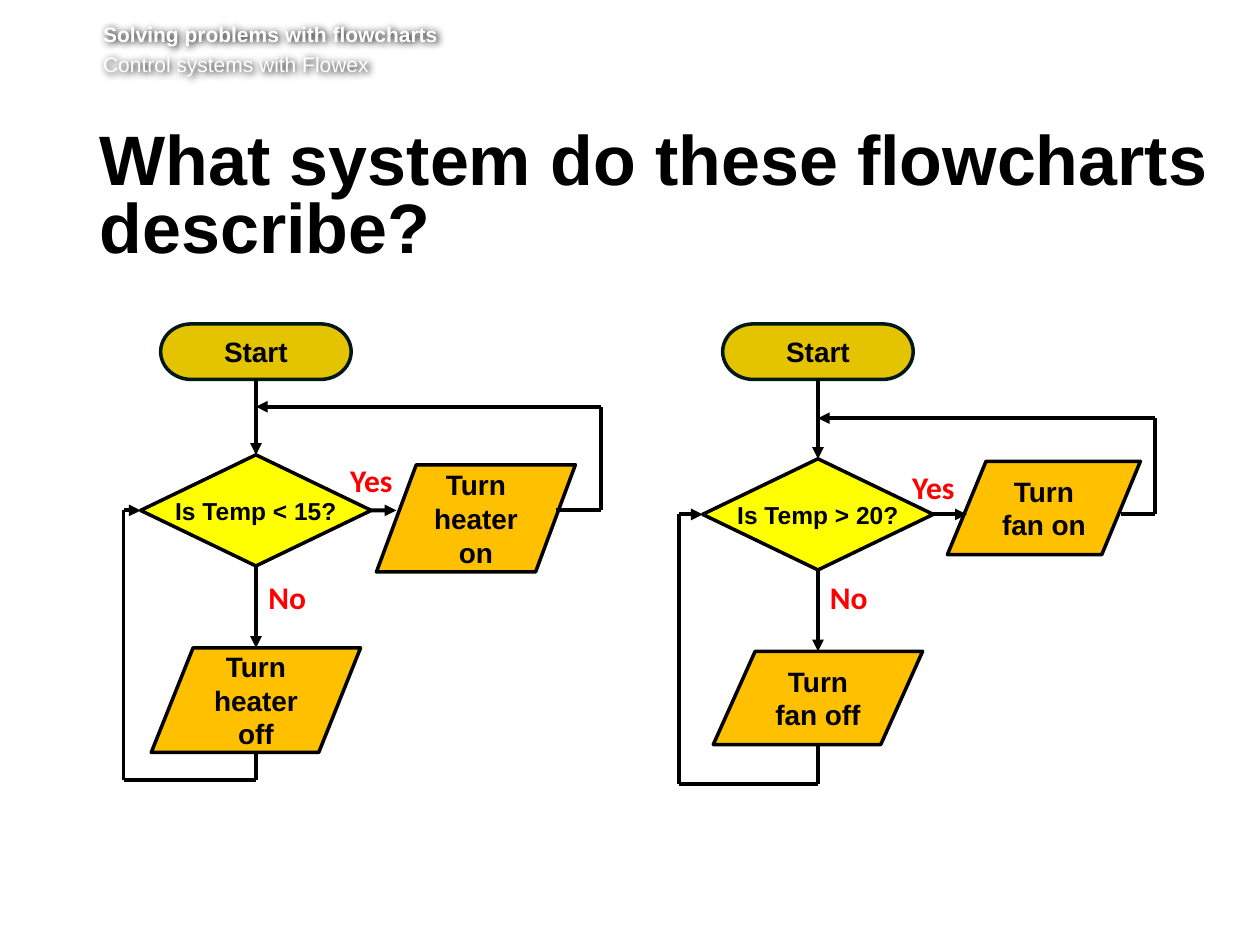
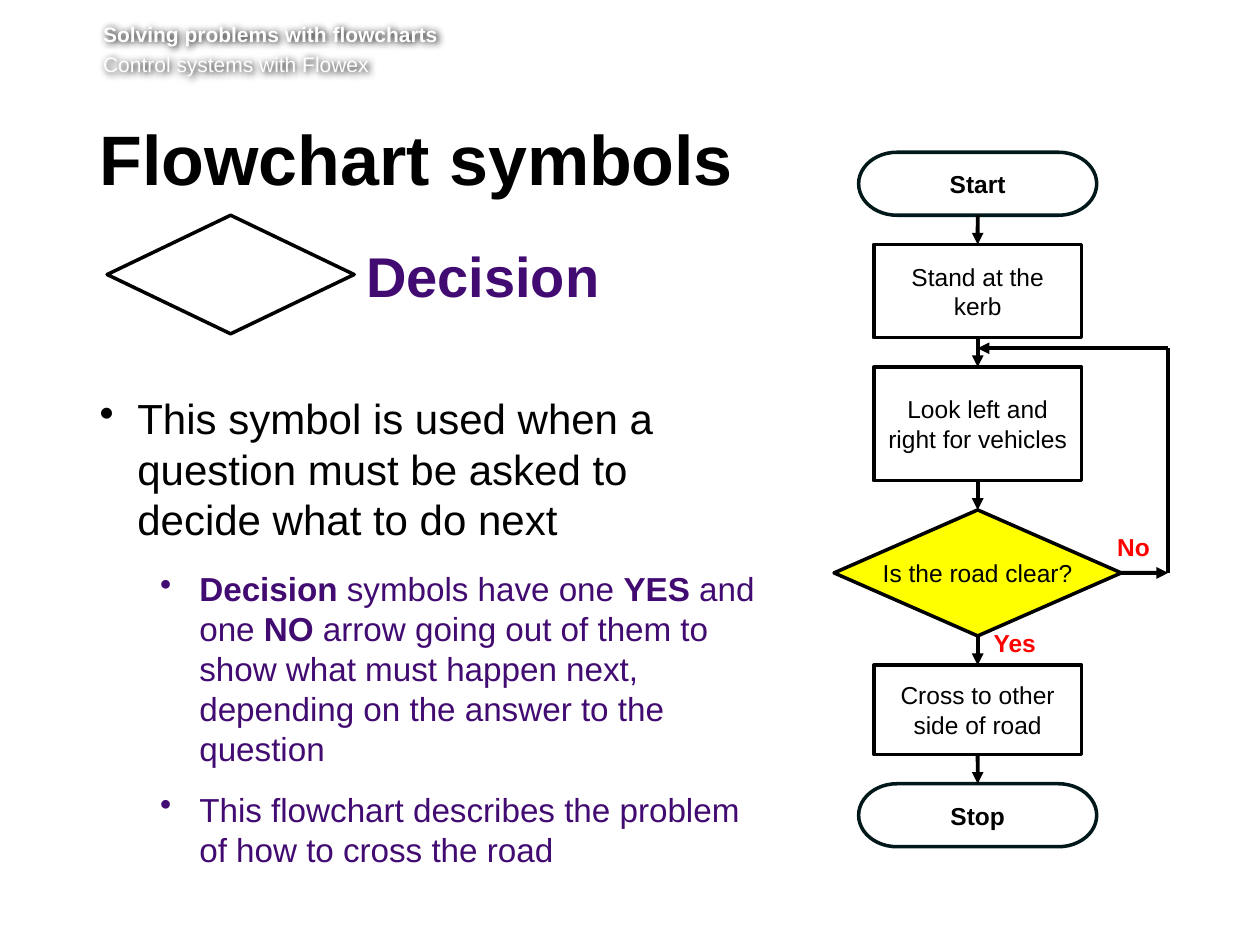
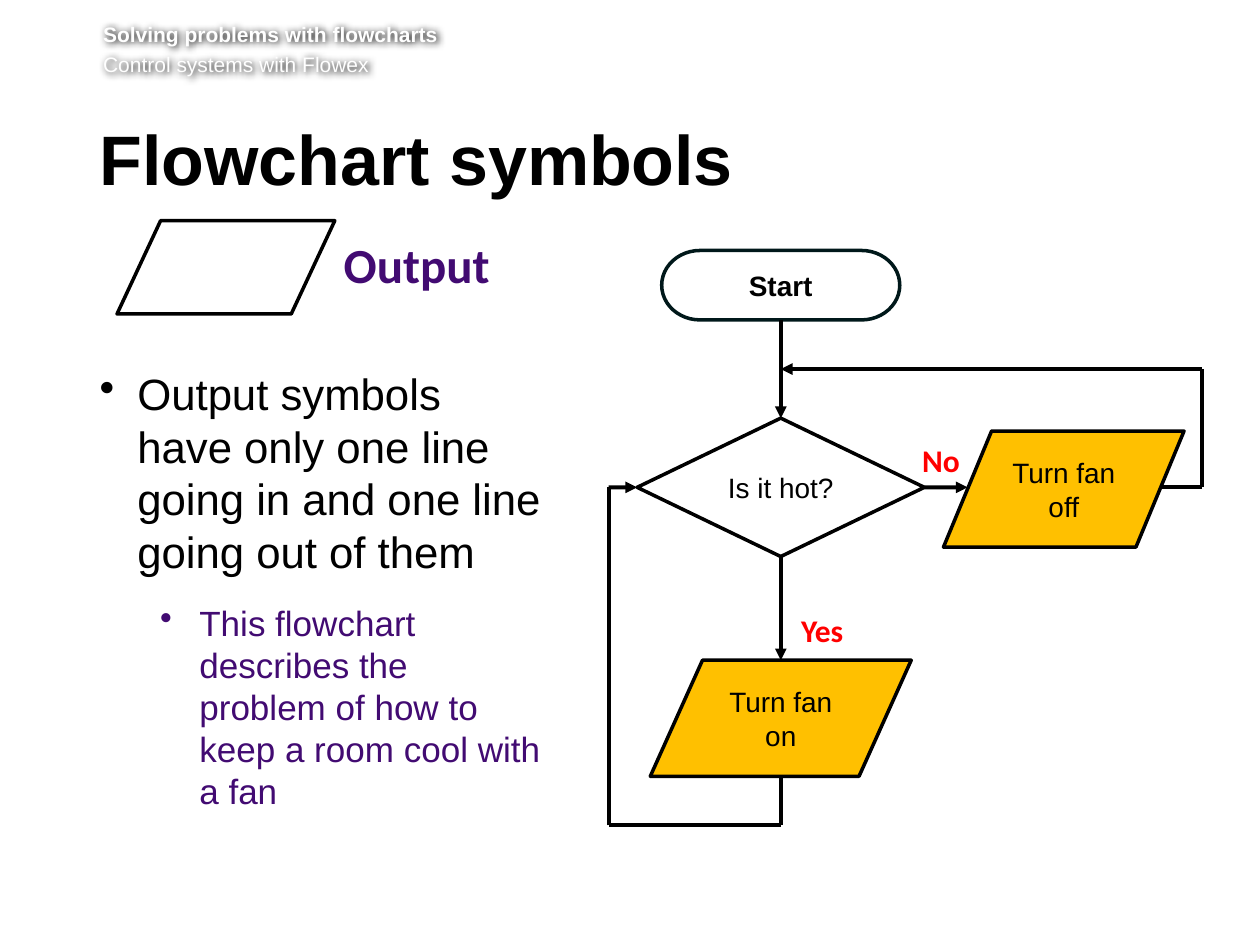
from dataclasses import dataclass

from lxml import etree
from pptx import Presentation
from pptx.dml.color import RGBColor
from pptx.enum.shapes import MSO_CONNECTOR, MSO_SHAPE
from pptx.enum.text import MSO_ANCHOR, PP_ALIGN
from pptx.oxml.ns import qn
from pptx.util import Cm, Pt

STRAIGHT = MSO_CONNECTOR.STRAIGHT
TERMINATOR = MSO_SHAPE.FLOWCHART_TERMINATOR
DECISION = MSO_SHAPE.FLOWCHART_DECISION
OUTPUT = MSO_SHAPE.FLOWCHART_DATA
PROCESS = MSO_SHAPE.RECTANGLE
MIDDLE = MSO_ANCHOR.MIDDLE
CENTER = PP_ALIGN.CENTER
TOP, LEFT, BOTTOM, RIGHT = range(4)


@dataclass(frozen=True)
class Theme:
    font: str = "Arial"
    label_font: str = "Calibri"
    black: str = "000000"
    white: str = "FFFFFF"
    purple: str = "420B72"
    red: str = "FF0000"
    yellow: str = "FFFF00"
    gold: str = "E4C400"
    orange: str = "FFC000"
    terminator_line: str = "00181A"
    title: int = 40
    title_leading: int = 39
    symbol: int = 32
    symbol_small: int = 28
    decision_body: tuple = (24, 19)
    output_body: tuple = (25, 20)
    header: int = 12
    label: int = 18
    node: int = 16
    node_small: int = 14
    outline: float = 2
    arrow: float = 2.25


T = Theme()


@dataclass(frozen=True)
class LoopChart:
    """Sizes in cm of a two-output loop, measured from its top left corner."""
    question: str
    side_text: str
    lower_text: str
    side_label: tuple    # text, x, y
    lower_label: tuple
    axis: float          # x of the vertical flow
    start: tuple         # width, height
    decision: tuple      # top, width, height
    side: tuple          # left, top, width, height
    lower: tuple         # top, width, height
    return_y: float
    right: float
    bottom: float
    decision_fill: str = None
    start_fill: str = None
    bold: bool = False
    question_size: int = T.node


HEATER = LoopChart(
    "Is Temp < 15?", "Turn heater on", "Turn heater off",
    ("Yes", 4.32, 2.64), ("No", 2.67, 5), axis=2.67, start=(3.84, 1.12),
    decision=(2.64, 4.65, 2.24), side=(5.1, 2.84, 4.01, 2.16),
    lower=(6.53, 4.22, 2.11), return_y=1.67, right=9.63, bottom=9.19,
    decision_fill=T.yellow, start_fill=T.gold, bold=True,
    question_size=T.node_small)
FAN = LoopChart(
    "Is Temp > 20?", "Turn fan on", "Turn fan off",
    ("Yes", 4.45, 2.77), ("No", 2.79, 5), axis=2.8, start=(3.84, 1.12),
    decision=(2.72, 4.65, 2.24), side=(5.41, 2.77, 3.89, 1.88),
    lower=(6.6, 4.22, 1.88), return_y=1.9, right=9.6, bottom=9.27,
    decision_fill=T.yellow, start_fill=T.gold, bold=True,
    question_size=T.node_small)
COOLING = LoopChart(
    "Is it hot?", "Turn fan off", "Turn fan on",
    ("No", 6.07, 3.71), ("Yes", 3.63, 7.14), axis=3.47, start=(4.8, 1.4),
    decision=(3.38, 5.79, 2.79), side=(6.75, 3.64, 4.85, 2.34),
    lower=(8.26, 5.26, 2.34), return_y=2.39, right=11.96, bottom=11.59)


def style(r, size, color=T.black, bold=False, font=T.font):
    r.font.name = font
    r.font.size = Pt(size)
    r.font.bold = bold
    r.font.color.rgb = RGBColor.from_string(color)


def add_text(s, x, y, w, h, lines, insets=(0, 0, 0.25, 0.13)):
    """Add a text box with one paragraph per (text, *style) entry of lines."""
    sp = s.shapes.add_textbox(Cm(x), Cm(y), Cm(w), Cm(h))
    tf = sp.text_frame
    tf.word_wrap = True
    (tf.margin_left, tf.margin_top,
     tf.margin_right, tf.margin_bottom) = map(Cm, insets)
    for i, (text, *look) in enumerate(lines):
        p = tf.add_paragraph() if i else tf.paragraphs[0]
        p.text = text
        style(p.runs[0], *look)
    return sp


def add_label(s, x, y, text, size=T.label, font=T.label_font):
    add_text(s, x, y, 1.8, 1, [(text, size, T.red, True, font)],
             (0.25, 0.13, 0, 0.13))


def add_node(s, kind, x, y, w, h, text="", fill=None, size=T.node, bold=False):
    sp = s.shapes.add_shape(kind, Cm(x), Cm(y), Cm(w), Cm(h))
    sp.shadow.inherit = False
    if fill:
        sp.fill.solid()
        sp.fill.fore_color.rgb = RGBColor.from_string(fill)
    else:
        sp.fill.background()
    sp.line.width = Pt(T.outline)
    sp.line.color.rgb = RGBColor.from_string(
        T.terminator_line if kind == TERMINATOR else T.black)
    tf = sp.text_frame
    tf.word_wrap = kind != DECISION
    tf.vertical_anchor = MIDDLE
    if text:
        p = tf.paragraphs[0]
        p.text = text
        p.alignment = CENTER
        style(p.runs[0], size, bold=bold)
    return sp


def add_line(s, start, end, arrow=False, begin=None, finish=None):
    """Draw a line; begin and finish are (shape, site) pairs to join."""
    c = s.shapes.add_connector(STRAIGHT, *map(Cm, start + end))
    c.line.width = Pt(T.arrow)
    c.line.color.rgb = RGBColor.from_string(T.black)
    if arrow:
        etree.SubElement(c.line._get_or_add_ln(), qn("a:tailEnd"),
                         type="triangle")
    etree.SubElement(c._element.spPr, qn("a:effectLst"))
    if begin:
        c.begin_connect(*begin)
    if finish:
        c.end_connect(*finish)


def add_path(s, points, finish=None):
    """Draw straight segments through points, with an arrow on the last."""
    last = len(points) - 2
    for i, ends in enumerate(zip(points, points[1:])):
        add_line(s, *ends, arrow=i == last,
                 finish=finish if i == last else None)


def draw_loop(s, x, y, c):
    axis = x + c.axis
    start_w, start_h = c.start
    top, dec_w, dec_h = c.decision
    side_x, side_y, side_w, side_h = c.side
    low_y, low_w, low_h = c.lower
    row = y + top + dec_h / 2
    skew = side_w / 10

    start = add_node(s, TERMINATOR, axis - start_w / 2, y, start_w, start_h,
                     "Start", c.start_fill, bold=True)
    decision = add_node(s, DECISION, axis - dec_w / 2, y + top, dec_w, dec_h,
                        c.question, c.decision_fill, c.question_size, c.bold)
    add_node(s, OUTPUT, x + side_x, y + side_y, side_w, side_h,
             c.side_text, T.orange, bold=c.bold)
    add_node(s, OUTPUT, axis - low_w / 2, y + low_y, low_w, low_h,
             c.lower_text, T.orange, bold=c.bold)

    add_line(s, (axis, y + start_h), (axis, y + top), True,
             (start, BOTTOM), (decision, TOP))
    add_line(s, (axis, y + top + dec_h), (axis, y + low_y), True,
             (decision, BOTTOM))
    add_line(s, (axis + dec_w / 2, row), (x + side_x + skew, row), True,
             (decision, RIGHT))
    right, back = x + c.right, y + c.return_y
    add_path(s, [(x + side_x + side_w - skew, row), (right, row),
                 (right, back), (axis, back)])
    foot = y + c.bottom
    add_path(s, [(axis, y + low_y + low_h), (axis, foot), (x, foot),
                 (x, row), (axis - dec_w / 2, row)], (decision, LEFT))
    for text, dx, dy in (c.side_label, c.lower_label):
        add_label(s, x + dx, y + dy, text)


def draw_road_chart(s, x, y):
    axis, gap, right = x + 2.9, 0.59, x + 6.74
    steps = [
        (TERMINATOR, 4.8, 1.27, "Start", None, True),
        (PROCESS, 4.19, 1.88, "Stand at the kerb", None, False),
        (PROCESS, 4.19, 2.29, "Look left and right for vehicles", None, False),
        (DECISION, 5.79, 2.54, "Is the road clear?", T.yellow, False),
        (PROCESS, 4.19, 1.8, "Cross to other side of road", None, False),
        (TERMINATOR, 4.8, 1.27, "Stop", None, True),
    ]
    top, previous = y, None
    for kind, w, h, text, fill, bold in steps:
        sp = add_node(s, kind, axis - w / 2, top, w, h, text, fill,
                      T.node_small, bold)
        if previous:
            add_line(s, (axis, top - gap), (axis, top), True,
                     (previous, BOTTOM), (sp, TOP))
        if kind == DECISION:
            row, corner = top + h / 2, axis + w / 2
            add_line(s, (corner, row), (right, row), True, (sp, RIGHT))
        top, previous = top + h + gap, sp
    back = y + 3.95
    add_path(s, [(right, row), (right, back), (axis, back)])
    add_label(s, x + 2.97, y + 9.47, "Yes", T.node_small, T.font)
    add_label(s, x + 5.46, y + 7.52, "No", T.node_small, T.font)


def draw_bullets(s, x, y, w, h, items, sizes):
    """Add bullets given as (level, runs); each run is (text, bold)."""
    levels = [(0.76, -0.76, 14, T.black), (2.01, -0.79, 12, T.purple)]
    tf = add_text(s, x, y, w, h, []).text_frame
    for i, (level, runs) in enumerate(items):
        margin, indent, after, color = levels[level]
        p = tf.add_paragraph() if i else tf.paragraphs[0]
        p.level = level
        pPr = p._p.get_or_add_pPr()
        pPr.set("marL", str(Cm(margin)))
        pPr.set("indent", str(Cm(indent)))
        etree.SubElement(pPr, qn("a:buChar"), char="•")
        p.space_after = Pt(after)
        for text, bold in runs:
            r = p.add_run()
            r.text = text
            style(r, sizes[level], color, bold)


def add_header(s):
    sp = add_text(s, 2.08, 0.43, 22.4, 1.24, [
        ("Solving problems with flowcharts", T.header, T.white, True),
        ("Control systems with Flowex", T.header, T.white)], (0, 0, 0, 0.13))
    sp.text_frame.paragraphs[1].space_before = Pt(2.9)
    effects = etree.SubElement(sp._element.spPr, qn("a:effectLst"))
    shadow = etree.SubElement(effects, qn("a:outerShdw"), blurRad="50800",
                              dist="12700", dir="2700000")
    etree.SubElement(shadow, qn("a:srgbClr"), val=T.black)


def new_slide(prs, title):
    s = prs.slides.add_slide(prs.slide_layouts[6])
    add_header(s)
    sp = add_text(s, 2.01, 2.51, 22.68, 1.85, [(title, T.title, T.black, True)],
                  (0, 0.13, 0.25, 0.13))
    sp.text_frame.paragraphs[0].line_spacing = Pt(T.title_leading)
    return s


def compare_slide(prs):
    s = new_slide(prs, "What system do these flowcharts describe?")
    draw_loop(s, 13.69, 6.53, FAN)
    draw_loop(s, 2.49, 6.53, HEATER)


def decision_slide(prs):
    s = new_slide(prs, "Flowchart symbols")
    add_node(s, DECISION, 2.16, 4.34, 4.98, 2.39)
    add_text(s, 7.38, 4.86, 6, 1.4, [("Decision", T.symbol, T.purple, True)])
    draw_bullets(s, 2.01, 7.92, 13.59, 9.8, [
        (0, [("This symbol is used when a question must be asked to decide "
              "what to do next", False)]),
        (1, [("Decision", True), (" symbols have one ", False),
             ("YES ", True), ("and one ", False), ("NO ", True),
             ("arrow going out of them to show what must happen next, "
              "depending on the answer to the question", False)]),
        (1, [("This flowchart describes the problem of how to cross the road",
              False)]),
    ], T.decision_body)
    draw_road_chart(s, 16.81, 3.07)


def output_slide(prs):
    s = new_slide(prs, "Flowchart symbols")
    add_node(s, OUTPUT, 2.36, 4.45, 4.39, 1.88)
    add_text(s, 6.93, 4.73, 4.3, 1.3, [
        ("Output", T.symbol_small, T.purple, True, T.label_font)])
    draw_bullets(s, 2.01, 7.4, 9.19, 9, [
        (0, [("Output symbols have only one line going in and one line going "
              "out of them", False)]),
        (1, [("This flowchart describes the problem of how to keep a room "
              "cool with a fan", False)]),
    ], T.output_body)
    draw_loop(s, 12.27, 5.05, COOLING)


def main():
    prs = Presentation()
    prs.slide_width, prs.slide_height = Cm(25.4), Cm(19.05)
    for build in (compare_slide, decision_slide, output_slide):
        build(prs)
    prs.save("out.pptx")


if __name__ == "__main__":
    main()
